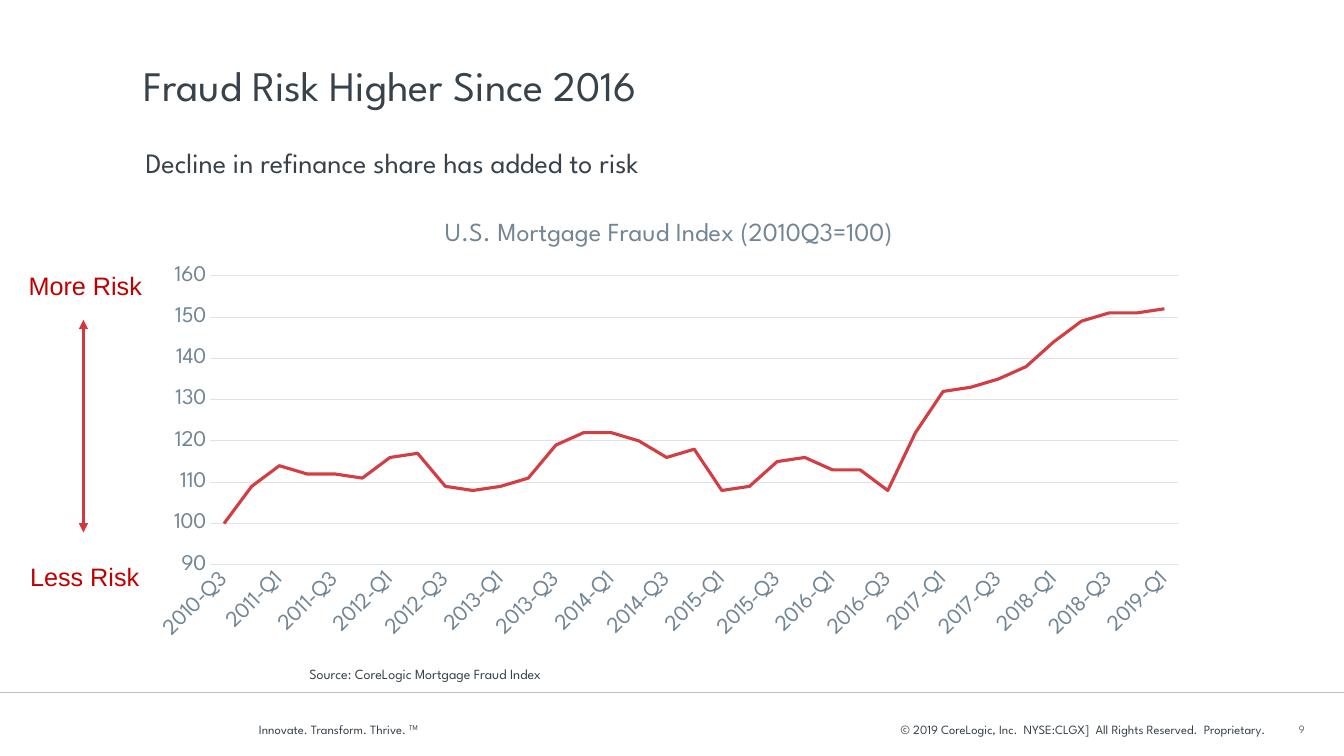
from lxml import etree
from pptx import Presentation
from pptx import oxml
from pptx.chart.data import CategoryChartData
from pptx.dml.color import RGBColor
from pptx.enum import chart as charts, shapes, text
from pptx.oxml import ns
from pptx.util import Pt

COLORS = {"ink": "38424A", "slate": "728595", "grid": "DFE3E6", "rule": "BFBFBF",
          "series": "D23E43", "arrow": "D1393E", "risk": "C00000", "number": "796F66"}
BRAND_FONT = "League Spartan"
LEFT, CENTER, RIGHT = text.PP_ALIGN.LEFT, text.PP_ALIGN.CENTER, text.PP_ALIGN.RIGHT
TOP, MIDDLE, BOTTOM = text.MSO_ANCHOR.TOP, text.MSO_ANCHOR.MIDDLE, text.MSO_ANCHOR.BOTTOM
INDEX_TITLE = "U.S. Mortgage Fraud Index (2010Q3=100)"
INDEX_VALUES = [100, 109, 114, 112, 112, 111, 116, 117, 109, 108, 109, 111,
                119, 122, 122, 120, 116, 118, 108, 109, 115, 116, 113, 113,
                108, 122, 132, 133, 135, 138, 144, 149, 151, 151, 152]
FIRST_QUARTER = 2010 * 4 + 2


def color(name):
    """Return the named colour."""
    return RGBColor.from_string(COLORS[name])


def style_font(font, size, tint, face=BRAND_FONT):
    """Set size, colour and typeface of a font."""
    font.size, font.name, font.bold = Pt(size), face, False
    font.color.rgb = color(tint)


def add_text(page, frame, words, size, tint="ink", face=BRAND_FONT, align=LEFT,
             anchor=TOP, insets=(3.6, 3.6, 3.6, 3.6), wrap=True):
    """Add a one-paragraph text box and return its paragraph."""
    box = page.shapes.add_textbox(*map(Pt, frame))
    body = box.text_frame
    body.word_wrap, body.vertical_anchor = wrap, anchor
    body.margin_left, body.margin_top, body.margin_right, body.margin_bottom = map(Pt, insets)
    body.text = words
    para = body.paragraphs[0]
    para.alignment = align
    for span in para.runs:
        style_font(span.font, size, tint, face)
    return para


def add_superscript(para, words, size, tint="ink"):
    """Append a raised run to a paragraph."""
    span = para.add_run()
    span.text = words
    style_font(span.font, size, tint)
    span.font._element.set("baseline", "30000")


def add_line(page, start, end, tint, width, arrows=False):
    """Add a straight line, with arrowheads at both ends if wanted."""
    line = page.shapes.add_connector(shapes.MSO_CONNECTOR.STRAIGHT, *map(Pt, start + end))
    line.line.color.rgb, line.line.width = color(tint), Pt(width)
    if arrows:
        outline = line.line._get_or_add_ln()
        for tag in ("a:headEnd", "a:tailEnd"):
            etree.SubElement(outline, ns.qn(tag), type="triangle")
    etree.SubElement(line._element.spPr, ns.qn("a:effectLst"))


def set_plot_layout(chart, x, y, w, h):
    """Fix the inner plot area as fractions of the chart."""
    area = chart._chartSpace.chart.plotArea
    for old in area.findall(ns.qn("c:layout")):
        area.remove(old)
    settings = [("layoutTarget", "inner"), ("xMode", "edge"), ("yMode", "edge"),
                ("x", x), ("y", y), ("w", w), ("h", h)]
    items = "".join(f'<c:{tag} val="{value}"/>' for tag, value in settings)
    area.insert(0, oxml.parse_xml(
        f'<c:layout {ns.nsdecls("c")}><c:manualLayout>{items}</c:manualLayout></c:layout>'))


def style_category_axis(axis):
    """Show every second quarter at a slant."""
    axis.major_tick_mark = charts.XL_TICK_MARK.NONE
    axis.tick_label_position = charts.XL_TICK_LABEL_POSITION.NEXT_TO_AXIS
    axis.tick_labels.offset = 100
    style_font(axis.tick_labels.font, 16, "slate")
    axis.format.line.color.rgb, axis.format.line.width = color("grid"), Pt(0.75)
    element = axis._element
    element.find(ns.qn("c:txPr")).find(ns.qn("a:bodyPr")).set("rot", "-2700000")
    skip = oxml.parse_xml(f'<c:tickLblSkip {ns.nsdecls("c")} val="2"/>')
    element.find(ns.qn("c:noMultiLvlLbl")).addprevious(skip)


def style_value_axis(axis):
    """Scale the index axis and draw its gridlines."""
    axis.minimum_scale, axis.maximum_scale, axis.major_unit = 90, 160, 10
    axis.major_tick_mark = charts.XL_TICK_MARK.NONE
    axis.tick_labels.number_format = "0"
    axis.tick_labels.number_format_is_linked = False
    style_font(axis.tick_labels.font, 16, "slate")
    axis.format.line.fill.background()
    grid = axis.major_gridlines.format.line
    grid.color.rgb, grid.width = color("grid"), Pt(0.75)


def add_index_chart(page, frame):
    """Add the fraud index line chart."""
    data = CategoryChartData(number_format="0")
    quarters = range(FIRST_QUARTER, FIRST_QUARTER + len(INDEX_VALUES))
    data.categories = [f"{quarter // 4}-Q{quarter % 4 + 1}" for quarter in quarters]
    data.add_series(INDEX_TITLE, INDEX_VALUES)
    chart = page.shapes.add_chart(charts.XL_CHART_TYPE.LINE, *map(Pt, frame), data).chart
    style_font(chart.font, 10, "ink")
    chart.has_legend = False
    chart.has_title = True
    title = chart.chart_title
    title.include_in_layout = False
    title.text_frame.text = INDEX_TITLE
    style_font(title.text_frame.paragraphs[0].runs[0].font, 18.6, "slate")
    chart.plots[0].vary_by_categories = False
    series = chart.plots[0].series[0]
    series.smooth = False
    series.marker.style = charts.XL_MARKER_STYLE.NONE
    series.format.line.color.rgb, series.format.line.width = color("series"), Pt(2.25)
    style_category_axis(chart.category_axis)
    style_value_axis(chart.value_axis)
    set_plot_layout(chart, 0.067, 0.168, 0.913, 0.646)


def main():
    """Build and save the slide."""
    deck = Presentation()
    deck.slide_width, deck.slide_height = Pt(960), Pt(540)
    page = deck.slides.add_slide(deck.slide_layouts[6])
    footer = {"anchor": MIDDLE, "insets": (0, 3.6, 0, 3.6)}
    add_text(page, (482.4, 505.8, 423.4, 30.2),
             "© 2019 CoreLogic, Inc.  NYSE:CLGX]  All Rights Reserved.  Proprietary. ",
             9, align=RIGHT, **footer)
    slogan = add_text(page, (185, 505.8, 188.6, 30.2), "Innovate. Transform. Thrive. ", 9, **footer)
    add_superscript(slogan, "TM", 9)
    add_line(page, (0, 494.6), (960, 494.6), "rule", 0.75)
    add_text(page, (99, 10.1, 837.4, 72), "Fraud Risk Higher Since 2016", 30, anchor=BOTTOM)
    add_text(page, (100.4, 100.1, 838.8, 41), "Decline in refinance share has added to risk", 20)
    add_text(page, (904.3, 496.8, 51.1, 28.8), "9", 8, "number", align=CENTER,
             anchor=BOTTOM, insets=(0, 3.6, 0, 0))
    add_index_chart(page, (99.4, 143.3, 757.4, 319.7))
    add_text(page, (217.4, 471.6, 545.8, 23), "Source: CoreLogic Mortgage Fraud Index", 10)
    add_line(page, (59.6, 228.4), (59.6, 380.4), "arrow", 2.25, arrows=True)
    for words, frame in (("More Risk", (12.7, 189.4, 96.5, 28.8)),
                         ("Less Risk", (13.7, 397.4, 93.6, 28.8))):
        add_text(page, frame, words, 18, "risk", "Arial", CENTER,
                 insets=(7.2, 3.6, 7.2, 3.6), wrap=False)
    deck.save("out.pptx")


if __name__ == "__main__":
    main()
